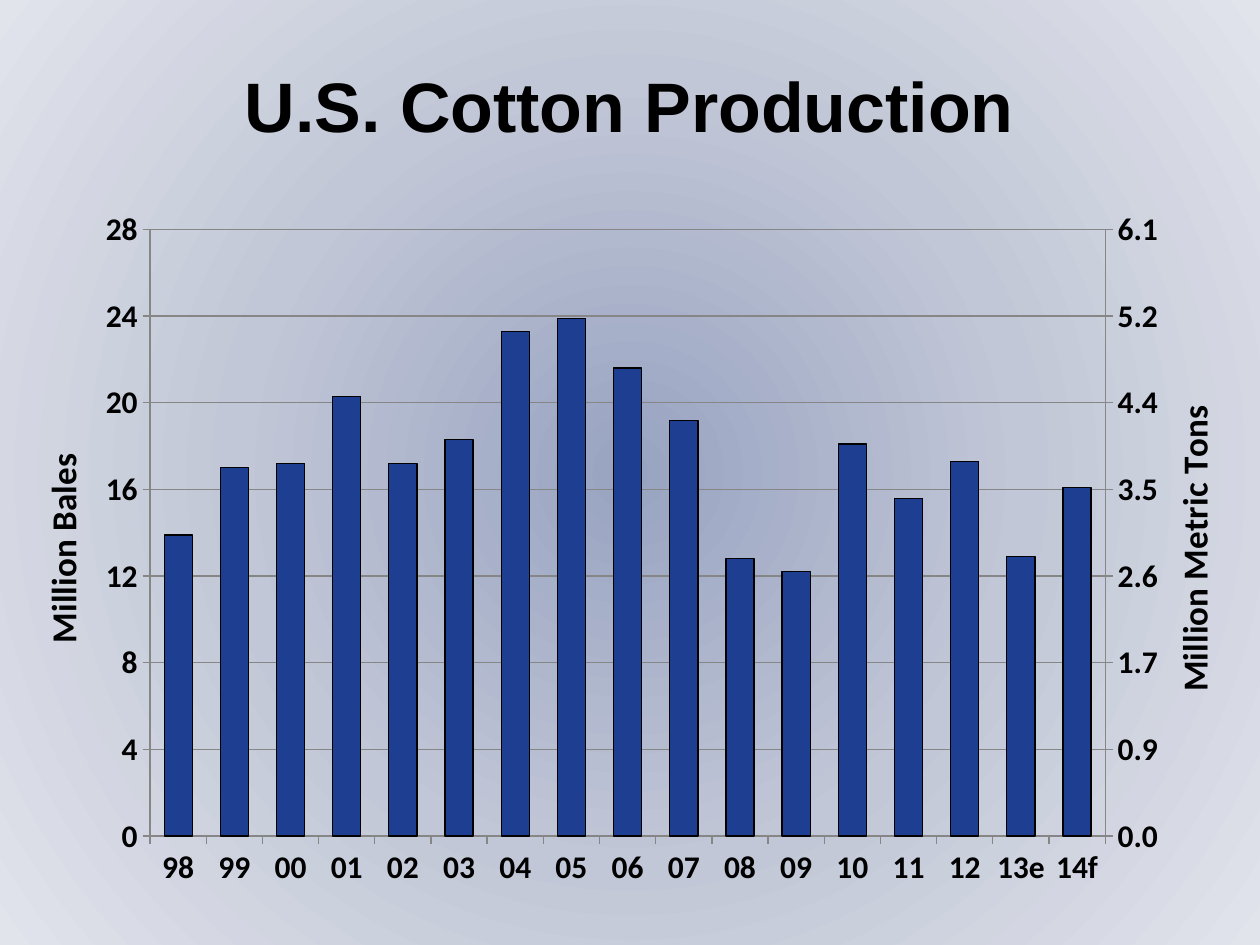
from copy import deepcopy

from lxml import etree
from pptx import Presentation
from pptx import util as u
from pptx.chart.axis import ValueAxis
from pptx.chart.data import CategoryChartData
from pptx.dml.color import RGBColor
from pptx.enum import chart as ch, text
from pptx.oxml import parse_xml
from pptx.oxml.ns import qn

NS = ('xmlns:a="http://schemas.openxmlformats.org/drawingml/2006/main" '
      'xmlns:c="http://schemas.openxmlformats.org/drawingml/2006/chart" '
      'xmlns:p="http://schemas.openxmlformats.org/presentationml/2006/main"')
YEARS = "98 99 00 01 02 03 04 05 06 07 08 09 10 11 12 13e 14f".split()
BALES = [13.9, 17, 17.2, 20.3, 17.2, 18.3, 23.3, 23.9, 21.6,
         19.2, 12.8, 12.2, 18.1, 15.6, 17.3, 12.9, 16.1]
TONS = [3, 3.7, 3.7, 4.4, 3.7, 4, 5.1, 5.2, 4.7,
        4.2, 2.8, 2.7, 3.9, 3.4, 3.8, 2.8, 3.5]
TONS_PER_BALE = 0.217865
GREY = "868686"


def rgb(color):
    return RGBColor.from_string(color)


def set_font(font, size, name, color="000000", bold=True):
    font.size, font.name, font.bold = u.Pt(size), name, bold
    font.color.rgb = rgb(color)


def add_text(tf, words, size, name, align=text.PP_ALIGN.CENTER):
    p = tf.paragraphs[0]
    p.alignment = align
    r = p.add_run()
    r.text = words
    set_font(r.font, size, name)


def set_line(line, color, width=0.75):
    line.color.rgb = rgb(color)
    line.width = u.Pt(width)


def radial_background(s, colors):
    step = 100000 // (len(colors) - 1)
    stops = "".join(f'<a:gs pos="{i * step}"><a:srgbClr val="{c}"/></a:gs>'
                    for i, c in enumerate(colors))
    s._element.cSld.insert(0, parse_xml(
        f'<p:bg {NS}><p:bgPr><a:gradFill rotWithShape="1"><a:gsLst>{stops}</a:gsLst>'
        '<a:path path="circle"><a:fillToRect l="50000" t="50000" r="50000" b="50000"/>'
        '</a:path></a:gradFill><a:effectLst/></p:bgPr></p:bg>'))


def place_title(s, words, x, y, w, h):
    sp = s.shapes.title
    sp.left, sp.top, sp.width, sp.height = x, y, w, h
    tf = sp.text_frame
    tf.word_wrap = True
    tf.vertical_anchor = text.MSO_ANCHOR.MIDDLE
    add_text(tf, words, 40, "Arial")


def format_axis(axis):
    axis.major_tick_mark = ch.XL_TICK_MARK.OUTSIDE
    axis.minor_tick_mark = ch.XL_TICK_MARK.NONE
    set_line(axis.format.line, GREY)


def format_value_axis(axis, title, top, step, number_format):
    format_axis(axis)
    axis.minimum_scale, axis.maximum_scale, axis.major_unit = 0, top, step
    axis.tick_labels.number_format = number_format
    axis.tick_labels.number_format_is_linked = False
    tf = axis.axis_title.text_frame
    tf.clear()
    add_text(tf, title, 20, "Calibri")


def set_plot_layout(plot_area, **fractions):
    for old in plot_area.findall(qn("c:layout")):
        plot_area.remove(old)
    parts = "".join(f'<c:{k} val="{v}"/>' for k, v in fractions.items())
    plot_area.insert(0, parse_xml(
        f'<c:layout {NS}><c:manualLayout><c:layoutTarget val="inner"/>'
        f'<c:xMode val="edge"/><c:yMode val="edge"/>{parts}</c:manualLayout></c:layout>'))


def add_right_axis(plot_area):
    bars = plot_area.find(qn("c:barChart"))
    cat, val = plot_area.find(qn("c:catAx")), plot_area.find(qn("c:valAx"))
    bars2, cat2, val2 = (deepcopy(e) for e in (bars, cat, val))
    bars.remove(bars.findall(qn("c:ser"))[1])
    bars2.remove(bars2.findall(qn("c:ser"))[0])
    ids = {cat.find(qn("c:axId")).get("val"): "50010",
           val.find(qn("c:axId")).get("val"): "50020"}
    for part in (bars2, cat2, val2):
        for ref in part.iter(qn("c:axId"), qn("c:crossAx")):
            ref.set("val", ids[ref.get("val")])
    bars.addnext(bars2)
    val.addnext(val2)
    val2.addnext(cat2)
    cat2.find(qn("c:delete")).set("val", "1")
    val2.find(qn("c:axPos")).set("val", "r")
    for old in val2.findall(qn("c:crosses")):
        val2.remove(old)
    crosses = etree.Element(qn("c:crosses"), val="max")
    val2.find(qn("c:crossAx")).addnext(crosses)
    right = ValueAxis(val2)
    right.has_major_gridlines = False
    return right


def place_chart(s, x, y, w, h):
    data = CategoryChartData()
    data.categories = YEARS
    data.add_series("Series 1", BALES)
    data.add_series("Series 2", TONS)
    chart = s.shapes.add_chart(ch.XL_CHART_TYPE.COLUMN_CLUSTERED, x, y, w, h, data).chart
    chart.has_title = chart.has_legend = False
    set_font(chart.font, 18, "Calibri")

    plot = chart.plots[0]
    plot.gap_width, plot.vary_by_categories = 100, False
    bales, tons = plot.series
    bales.format.fill.solid()
    bales.format.fill.fore_color.rgb = rgb("1E3E92")
    set_line(bales.format.line, "000000")
    tons.format.fill.background()
    tons.format.line.fill.background()

    format_axis(chart.category_axis)
    chart.category_axis.tick_label_position = ch.XL_TICK_LABEL_POSITION.LOW
    left = chart.value_axis
    left.has_major_gridlines = True
    set_line(left.major_gridlines.format.line, GREY)
    plot_area = chart._chartSpace.chart.plotArea
    set_plot_layout(plot_area, x=0.099, y=0.109, w=0.799, h=0.804)
    right = add_right_axis(plot_area)
    format_value_axis(left, "Million Bales", 28, 4, "General")
    format_value_axis(right, "Million Metric Tons", 28 * TONS_PER_BALE,
                      4 * TONS_PER_BALE, "#,##0.0")


def main():
    prs = Presentation()
    prs.slide_width, prs.slide_height = u.Cm(25.4), u.Cm(19.05)
    s = prs.slides.add_slide(prs.slide_layouts[5])
    radial_background(s, ["98A3C1", "C2C7D7", "E1E4EB"])
    x, w = u.Cm(0.64), u.Cm(24.1)
    place_title(s, "U.S. Cotton Production", x, u.Cm(0.84), w, u.Cm(2.54))
    place_chart(s, x, u.Cm(2.97), w, u.Cm(15.21))
    prs.save("out.pptx")


if __name__ == "__main__":
    main()
